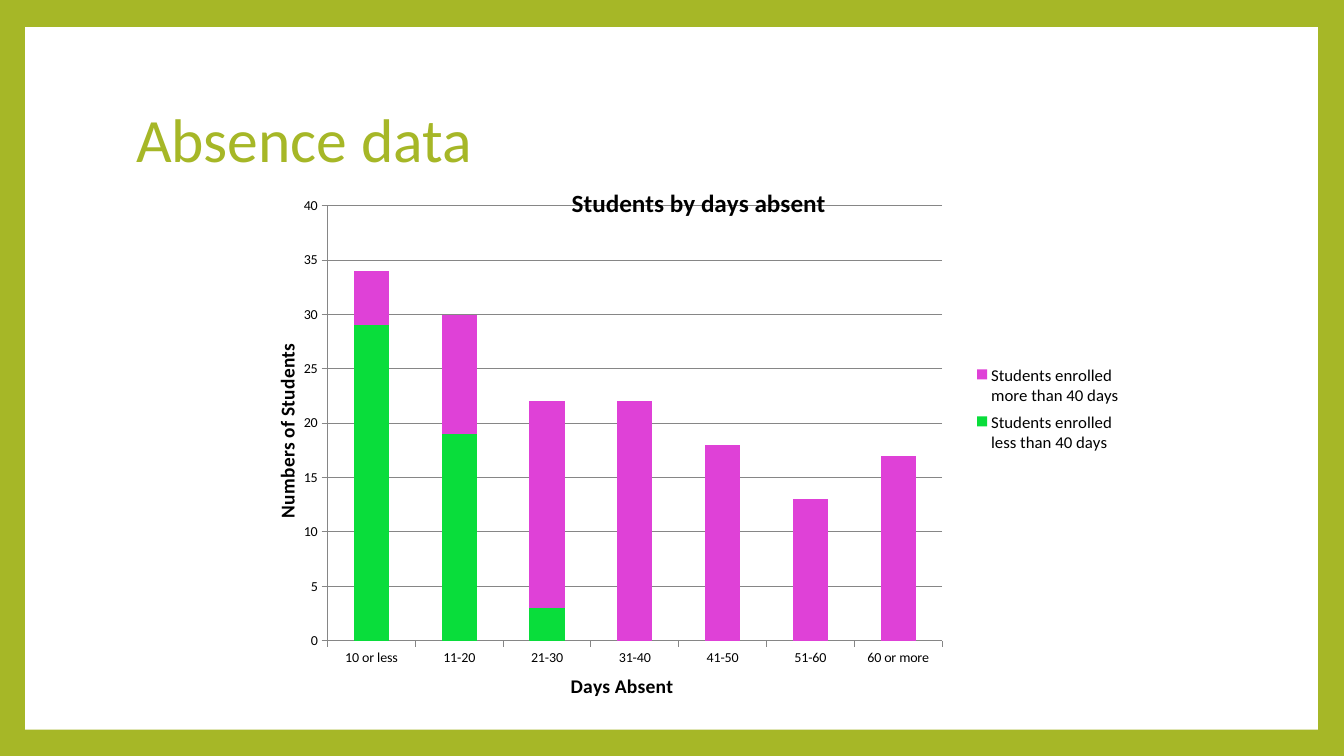
"""Build a slide with a stacked column chart of student absences."""
import pptx
import pptx.chart.data
import pptx.dml.color
import pptx.enum.chart
import pptx.enum.shapes
import pptx.enum.text
import pptx.oxml
import pptx.oxml.ns
import pptx.util

Inches = pptx.util.Inches
qn = pptx.oxml.ns.qn

HUES = {"lime": "A6B727", "white": "FFFFFF", "black": "000000",
        "grey": "868686", "green": "09DD3B", "pink": "DF41D7"}
FONT = "Calibri"
HEAD = "Absence data"
NAMES = {"chart": "Students by days absent", "days": "Days Absent",
         "count": "Numbers of Students"}
DAYS = ["10 or less", "11-20", "21-30", "31-40", "41-50", "51-60", "60 or more"]
GROUPS = [
    ("Students enrolled less than 40 days", "green", [29, 19, 3, 0, 0, 0, 0]),
    ("Students enrolled more than 40 days", "pink", [5, 11, 19, 22, 18, 13, 17]),
]


def color(name):
    return pptx.dml.color.RGBColor.from_string(HUES[name])


def style(font, size, hue="black", bold=False):
    font.name = FONT
    font.size = pptx.util.Pt(size)
    font.bold = bold
    font.color.rgb = color(hue)


def write(frame, text, size, **look):
    """Put one line of formatted text in a frame."""
    frame.text = text
    style(frame.paragraphs[0].runs[0].font, size, **look)


def place(part, after=None, inner=False, **spots):
    """Give a chart part a manual layout in fractions of the chart."""
    for old in part.findall(qn("c:layout")):
        part.remove(old)
    marks = [("layoutTarget", "inner")] if inner else []
    marks += [(key + "Mode", "edge") for key in ("x", "y")]
    marks += spots.items()
    body = "".join(f'<c:{key} val="{val}"/>' for key, val in marks)
    space = pptx.oxml.ns.nsdecls("c")
    layout = pptx.oxml.parse_xml(
        f"<c:layout {space}><c:manualLayout>{body}</c:manualLayout></c:layout>")
    if after:
        part.find(qn(after)).addnext(layout)
    else:
        part.insert(0, layout)


def label(title, text, size, x, y):
    write(title.text_frame, text, size, bold=True)
    place(title._element, after="c:tx", x=x, y=y)


def add_chart(slide):
    data = pptx.chart.data.CategoryChartData()
    data.categories = DAYS
    for name, hue, vals in GROUPS:
        data.add_series(name, vals)
    kind = pptx.enum.chart.XL_CHART_TYPE.COLUMN_STACKED
    chart = slide.shapes.add_chart(
        kind, Inches(2.59), Inches(1.59), Inches(8.67), Inches(5.4), data).chart
    style(chart.font, 10)

    plot = chart.plots[0]
    plot.gap_width = 150
    plot.overlap = 100
    plot.vary_by_categories = False
    for series, (name, hue, vals) in zip(plot.series, GROUPS):
        series.format.fill.solid()
        series.format.fill.fore_color.rgb = color(hue)

    days, count = chart.category_axis, chart.value_axis
    count.minimum_scale, count.maximum_scale, count.major_unit = 0, 40, 5
    count.has_major_gridlines = True
    for axis in (days, count):
        axis.major_tick_mark = pptx.enum.chart.XL_TICK_MARK.OUTSIDE
    for line in (days.format.line, count.format.line,
                 count.major_gridlines.format.line):
        line.color.rgb = color("grey")
        line.width = pptx.util.Pt(0.75)

    chart.has_title = True
    label(chart.chart_title, NAMES["chart"], 18, 0.35, 0.04)
    label(days.axis_title, NAMES["days"], 14, 0.35, 0.95)
    label(count.axis_title, NAMES["count"], 14, 0.01, 0.34)

    chart.has_legend = True
    legend = chart.legend
    legend.position = pptx.enum.chart.XL_LEGEND_POSITION.RIGHT
    legend.include_in_layout = False
    style(legend.font, 12)
    place(legend._element, after="c:legendPos", x=0.81, y=0.37, w=0.18, h=0.19)
    area = chart._chartSpace.find(".//" + qn("c:plotArea"))
    place(area, inner=True, x=0.076, y=0.085, w=0.703, h=0.812)


def main():
    deck = pptx.Presentation()
    deck.slide_width, deck.slide_height = Inches(13.33), Inches(7.5)
    slide = deck.slides.add_slide(deck.slide_layouts[5])
    slide.background.fill.solid()
    slide.background.fill.fore_color.rgb = color("lime")

    panel = slide.shapes.add_shape(
        pptx.enum.shapes.MSO_SHAPE.RECTANGLE,
        Inches(0.25), Inches(0.27), Inches(12.82), Inches(6.97))
    panel.shadow.inherit = False
    panel.fill.solid()
    panel.fill.fore_color.rgb = color("white")
    panel.line.fill.background()
    slide.shapes._spTree.insert(2, panel._element)

    title = slide.shapes.title
    title.left, title.top = Inches(1.25), Inches(0.67)
    title.width, title.height = Inches(10.8), Inches(1.48)
    write(title.text_frame, HEAD, 44, hue="lime")
    title.text_frame.vertical_anchor = pptx.enum.text.MSO_ANCHOR.MIDDLE
    line = title.text_frame.paragraphs[0]
    line.alignment = pptx.enum.text.PP_ALIGN.LEFT
    line.line_spacing = 0.9

    add_chart(slide)
    deck.save("out.pptx")


if __name__ == "__main__":
    main()
